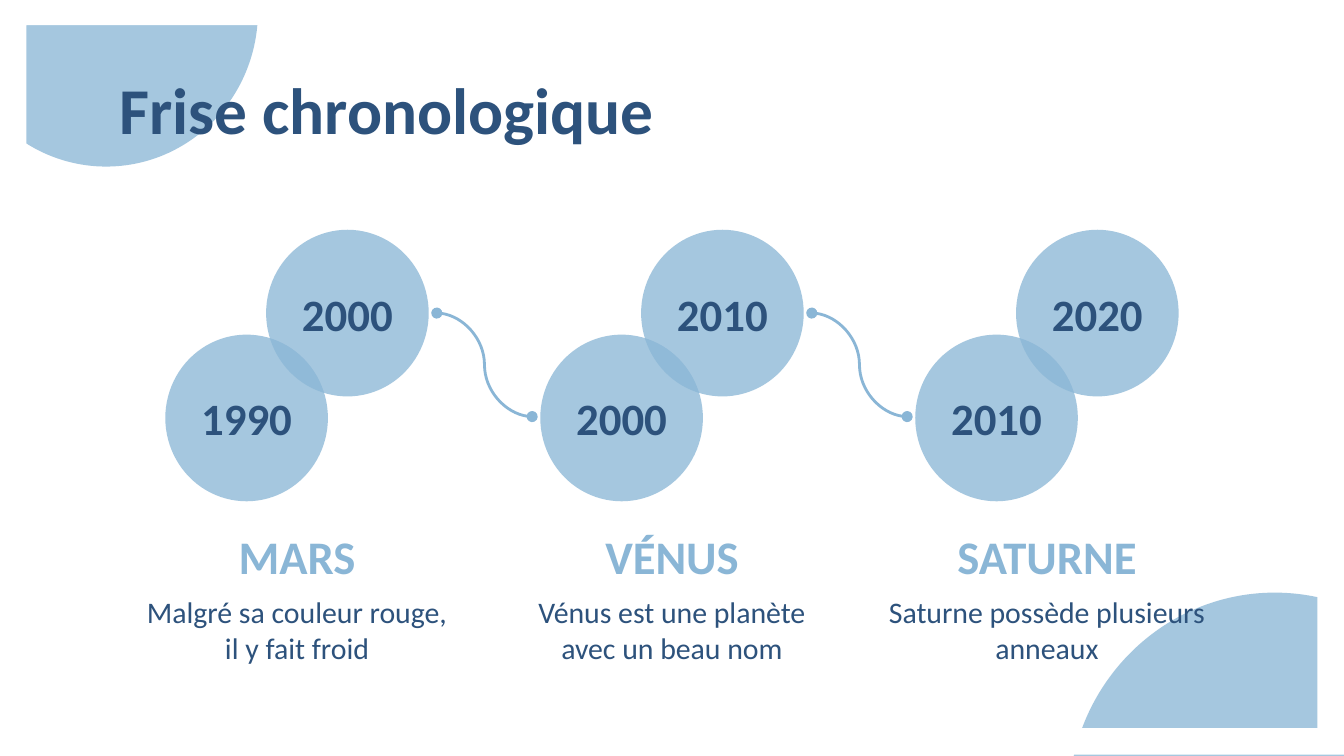
"""Build a timeline slide with three planets, each with a start and an end year."""
from lxml.etree import SubElement
from pptx import Presentation
from pptx.dml.color import RGBColor
from pptx.enum.shapes import MSO_CONNECTOR, MSO_SHAPE
from pptx.enum.text import MSO_ANCHOR, MSO_AUTO_SIZE, PP_ALIGN
from pptx.oxml.ns import qn
from pptx.util import Inches, Pt

BLUE = "8AB6D6"
NAVY = "2D527C"
WHITE = "FFFFFF"
SLIDE_WIDTH = 10
SLIDE_HEIGHT = SLIDE_WIDTH * 9 / 16


def add_filled(kind, left, top, width, height, color, opacity=100):
    shape = slide.shapes.add_shape(kind, Inches(left), Inches(top), Inches(width), Inches(height))
    shape.shadow.inherit = False
    shape.line.fill.background()
    shape.fill.solid()
    shape.fill.fore_color.rgb = RGBColor.from_string(color)
    if opacity < 100:
        color_node = shape.fill._xPr.find(qn("a:solidFill"))[0]
        SubElement(color_node, qn("a:alpha"), val=str(opacity * 1000))
    return shape


def write(shape, text, size, color, bold=False, align=PP_ALIGN.CENTER,
          anchor=MSO_ANCHOR.MIDDLE, inset=0.1):
    frame = shape.text_frame
    frame.word_wrap = True
    frame.auto_size = MSO_AUTO_SIZE.NONE
    frame.vertical_anchor = anchor
    frame.margin_left = frame.margin_right = Inches(inset)
    frame.margin_top = frame.margin_bottom = Inches(inset)
    paragraph = frame.paragraphs[0]
    paragraph.alignment = align
    run = paragraph.add_run()
    run.text = text
    run.font.name = "Calibri"
    run.font.size = Pt(size)
    run.font.bold = bold
    run.font.color.rgb = RGBColor.from_string(color)


presentation = Presentation()
presentation.slide_width = Inches(SLIDE_WIDTH)
presentation.slide_height = Inches(SLIDE_HEIGHT)
slide = presentation.slides.add_slide(presentation.slide_layouts[5])

add_filled(MSO_SHAPE.OVAL, 7.95, 4.41, 3.07, 3.14, BLUE, 76)
add_filled(MSO_SHAPE.OVAL, -0.34, -1.07, 2.26, 2.31, BLUE, 76)
border = add_filled(MSO_SHAPE.FRAME, 0, -0.01, SLIDE_WIDTH, SLIDE_HEIGHT, WHITE)
border.adjustments[0] = 0.035

title = slide.shapes.title
title.left, title.top = Inches(0.79), Inches(0.49)
title.width, title.height = Inches(8.43), Inches(0.63)
write(title, "Frise chronologique", 35, NAVY, bold=True, align=PP_ALIGN.LEFT)
slide.shapes._spTree.append(title._element)

planets = [
    ("MARS", "Malgré sa couleur rouge, il y fait froid", "1990", "2000"),
    ("VÉNUS", "Vénus est une planète avec un beau nom", "2000", "2010"),
    ("SATURNE", "Saturne possède plusieurs anneaux", "2010", "2020"),
]
COLUMN_STEP = 2.79

for index, (name, description, start_year, end_year) in enumerate(planets):
    offset = index * COLUMN_STEP
    for year, left, top in ((start_year, 1.23, 2.49), (end_year, 1.98, 1.71)):
        circle = add_filled(MSO_SHAPE.OVAL, left + offset, top, 1.21, 1.24, BLUE, 76)
        write(circle, year, 24, NAVY, bold=True, inset=0)

    for text, top, height, size, color, bold in (
        (name, 3.83, 0.58, 25, BLUE, True),
        (description, 4.32, 0.76, 16, NAVY, False),
    ):
        box = slide.shapes.add_textbox(
            Inches(0.92 + offset), Inches(top), Inches(2.58), Inches(height))
        write(box, text, size, color, bold, anchor=MSO_ANCHOR.TOP)

    if index < len(planets) - 1:
        connector = slide.shapes.add_connector(
            MSO_CONNECTOR.CURVE, Inches(3.25 + offset), Inches(2.33),
            Inches(3.96 + offset), Inches(3.1))
        connector.line.color.rgb = RGBColor.from_string(BLUE)
        connector.line.width = Pt(1.5)
        line_node = connector.line._get_or_add_ln()
        for end in ("a:headEnd", "a:tailEnd"):
            SubElement(line_node, qn(end), type="oval")
        SubElement(connector._element.spPr, qn("a:effectLst"))

presentation.save("out.pptx")
